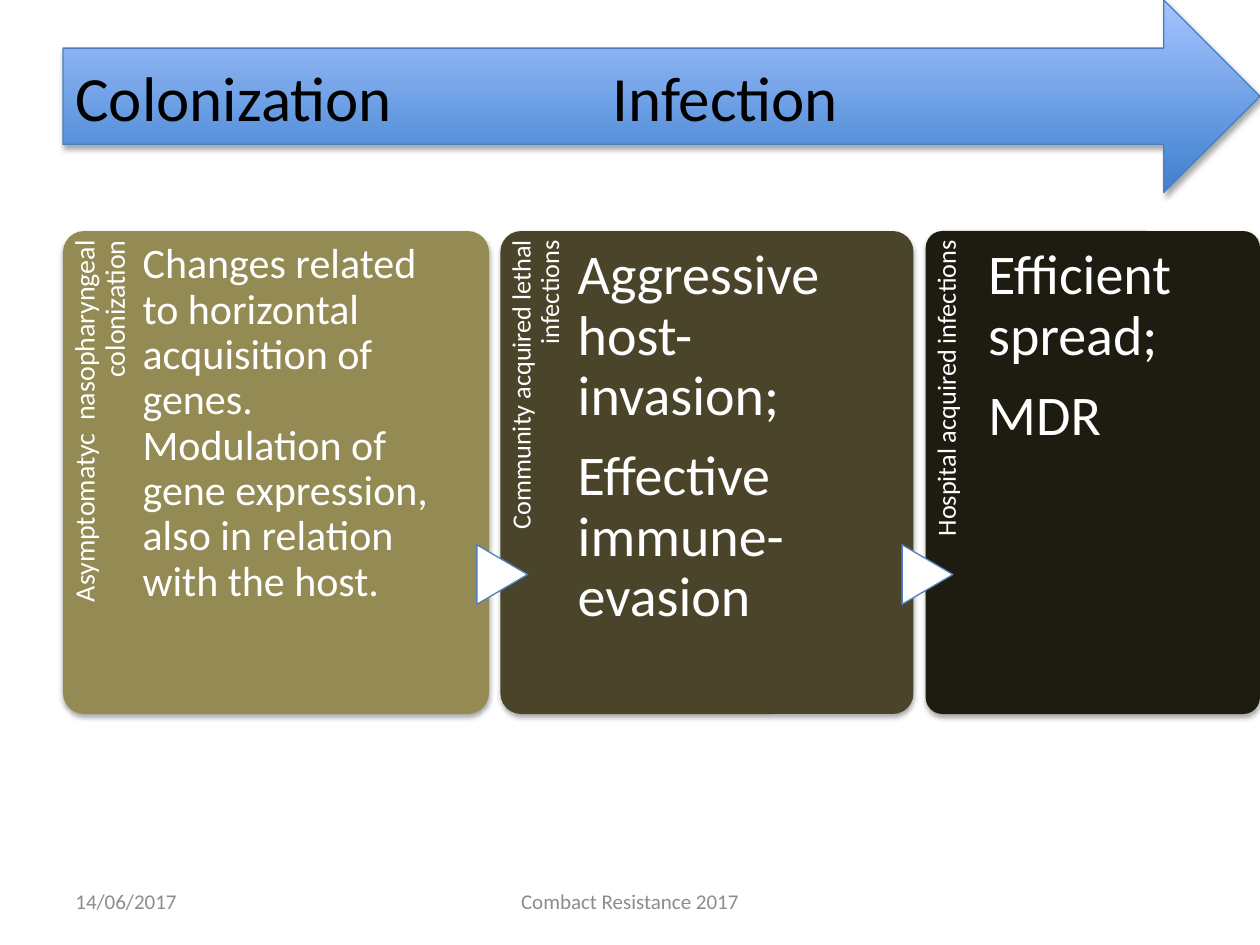
from dataclasses import dataclass

import pptx
import pptx.dml.color
import pptx.enum.shapes
import pptx.enum.text
import pptx.oxml
import pptx.oxml.ns
import pptx.presentation
import pptx.shapes.autoshape
import pptx.slide
import pptx.text.text
import pptx.util

Pt = pptx.util.Pt
Color = pptx.dml.color.RGBColor
Align = pptx.enum.text.PP_ALIGN
Anchor = pptx.enum.text.MSO_ANCHOR
Kind = pptx.enum.shapes.MSO_SHAPE
Shape = pptx.shapes.autoshape.Shape

WHITE = Color(0xFF, 0xFF, 0xFF)
BLACK = Color(0x00, 0x00, 0x00)
GREY = Color(0x8C, 0x8C, 0x8C)
SAND = Color(0x94, 0x8A, 0x54)
BROWN = Color(0x4A, 0x45, 0x2A)
DARK = Color(0x1E, 0x1C, 0x11)
BLUE = Color(0x3F, 0x80, 0xCE)
PALE = Color(0xA4, 0xC4, 0xFF)
EDGE = Color(0x4B, 0x7E, 0xBC)
RIM = Color(0x4F, 0x81, 0xBD)

FONT = "Calibri"
TOP, HIGH = 132, 276
SPAN = 226
LABEL = 0.2
INDENT, BODY = 0.187, 0.745


@dataclass(frozen=True)
class Box:
    left: float
    top: float
    width: float
    height: float

    def points(self) -> tuple[Pt, ...]:
        return Pt(self.left), Pt(self.top), Pt(self.width), Pt(self.height)


@dataclass(frozen=True)
class Style:
    size: float
    color: Color = WHITE
    align: Align = Align.LEFT
    line: float = 1.0
    after: float = 0


@dataclass(frozen=True)
class Panel:
    left: float
    width: float
    fill: Color
    label: str
    small: float
    lines: tuple[str, ...]
    large: float
    inset: float


PANELS = (
    Panel(36, 243.5, SAND, "Asymptomatyc  nasopharyngeal colonization", 16,
          ("Changes related to horizontal acquisition of genes. Modulation of "
           "gene expression, also in relation with the host.",), 24, 6.5),
    Panel(286, 236, BROWN, "Community acquired lethal infections", 15,
          ("Aggressive host-invasion;", "Effective immune-evasion"), 32, 8.64),
    Panel(529, 191, DARK, "Hospital acquired infections", 15,
          ("Efficient spread;", "MDR"), 32, 8.64),
)


def add_shade(shape: Shape) -> None:
    shape.shadow.inherit = False
    effects = shape.element.spPr.find(pptx.oxml.ns.qn("a:effectLst"))
    effects.append(pptx.oxml.parse_xml(
        f'<a:outerShdw {pptx.oxml.ns.nsdecls("a")} blurRad="{Pt(3.1)}" '
        f'dist="{Pt(1.8)}" dir="5400000" rotWithShape="0">'
        '<a:srgbClr val="000000"><a:alpha val="35000"/></a:srgbClr>'
        '</a:outerShdw>'))


def style_text(para: pptx.text.text._Paragraph, style: Style) -> None:
    para.alignment = style.align
    para.line_spacing = style.line
    para.space_after = Pt(style.after)
    para.font.name = FONT
    para.font.size = Pt(style.size)
    para.font.color.rgb = style.color


def add_text(slide: pptx.slide.Slide, box: Box, lines: tuple[str, ...],
             style: Style, pads: tuple[float, float, float, float],
             anchor: Anchor = Anchor.TOP) -> Shape:
    shape = slide.shapes.add_textbox(*box.points())
    frame = shape.text_frame
    frame.word_wrap = True
    frame.vertical_anchor = anchor
    (frame.margin_left, frame.margin_top,
     frame.margin_right, frame.margin_bottom) = map(Pt, pads)
    frame.text = "\n".join(lines)
    for para in frame.paragraphs:
        style_text(para, style)
    return shape


def add_panel(slide: pptx.slide.Slide, panel: Panel) -> None:
    card = slide.shapes.add_shape(
        Kind.ROUNDED_RECTANGLE,
        *Box(panel.left, TOP, panel.width, HIGH).points())
    card.adjustments[0] = 0.05
    card.fill.solid()
    card.fill.fore_color.rgb = panel.fill
    card.line.fill.background()
    add_shade(card)

    depth = panel.width * LABEL
    label = add_text(
        slide,
        Box(panel.left + (depth - SPAN) / 2, TOP + (SPAN - depth) / 2,
            SPAN, depth),
        (panel.label,), Style(panel.small, WHITE, Align.RIGHT, 0.9),
        (0, 4.3, 5.4, 0))
    label.rotation = 270

    add_text(
        slide,
        Box(panel.left + panel.width * INDENT, TOP, panel.width * BODY, HIGH),
        panel.lines,
        Style(panel.large, line=0.9, after=round(panel.large * 0.35, 1)),
        (0, panel.inset, 0, 0))


def add_wedge(slide: pptx.slide.Slide, middle: float) -> None:
    wide, high = 34, 29
    wedge = slide.shapes.add_shape(
        Kind.FLOWCHART_EXTRACT,
        *Box(middle - wide / 2, 328.3 - high / 2, wide, high).points())
    wedge.rotation = 90
    wedge.shadow.inherit = False
    wedge.fill.solid()
    wedge.fill.fore_color.rgb = WHITE
    wedge.line.color.rgb = RIM
    wedge.line.width = Pt(0.75)


def add_arrow(slide: pptx.slide.Slide) -> None:
    arrow = slide.shapes.add_shape(
        Kind.RIGHT_ARROW, *Box(36, 0, 684, 110).points())
    arrow.fill.gradient()
    arrow.fill.gradient_angle = 90
    for stop, color in zip(arrow.fill.gradient_stops, (BLUE, PALE)):
        stop.color.rgb = color
    arrow.line.color.rgb = EDGE
    arrow.line.width = Pt(0.75)
    add_shade(arrow)

    frame = arrow.text_frame
    frame.vertical_anchor = Anchor.MIDDLE
    frame.text = "Colonization\tInfection"
    para = frame.paragraphs[0]
    style_text(para, Style(36, BLACK))
    tabs = pptx.oxml.parse_xml(
        f'<a:tabLst {pptx.oxml.ns.nsdecls("a")}>'
        f'<a:tab pos="{Pt(307)}" algn="l"/></a:tabLst>')
    props = para._p.get_or_add_pPr()
    props.find(pptx.oxml.ns.qn("a:defRPr")).addprevious(tabs)


def main() -> None:
    deck = pptx.Presentation()
    deck.slide_width, deck.slide_height = Pt(720), Pt(540)
    slide = deck.slides.add_slide(deck.slide_layouts[6])

    pads = (7.2, 3.6, 7.2, 3.6)
    add_text(slide, Box(36, 500.5, 168, 28.75), ("14/06/2017",),
             Style(12, GREY), pads, Anchor.MIDDLE)
    add_text(slide, Box(246, 500.5, 228, 28.75), ("Combact Resistance 2017",),
             Style(12, GREY, Align.CENTER), pads, Anchor.MIDDLE)

    for panel in PANELS:
        add_panel(slide, panel)
    for panel in PANELS[1:]:
        add_wedge(slide, panel.left + 1)
    add_arrow(slide)
    deck.save("out.pptx")


if __name__ == "__main__":
    main()
